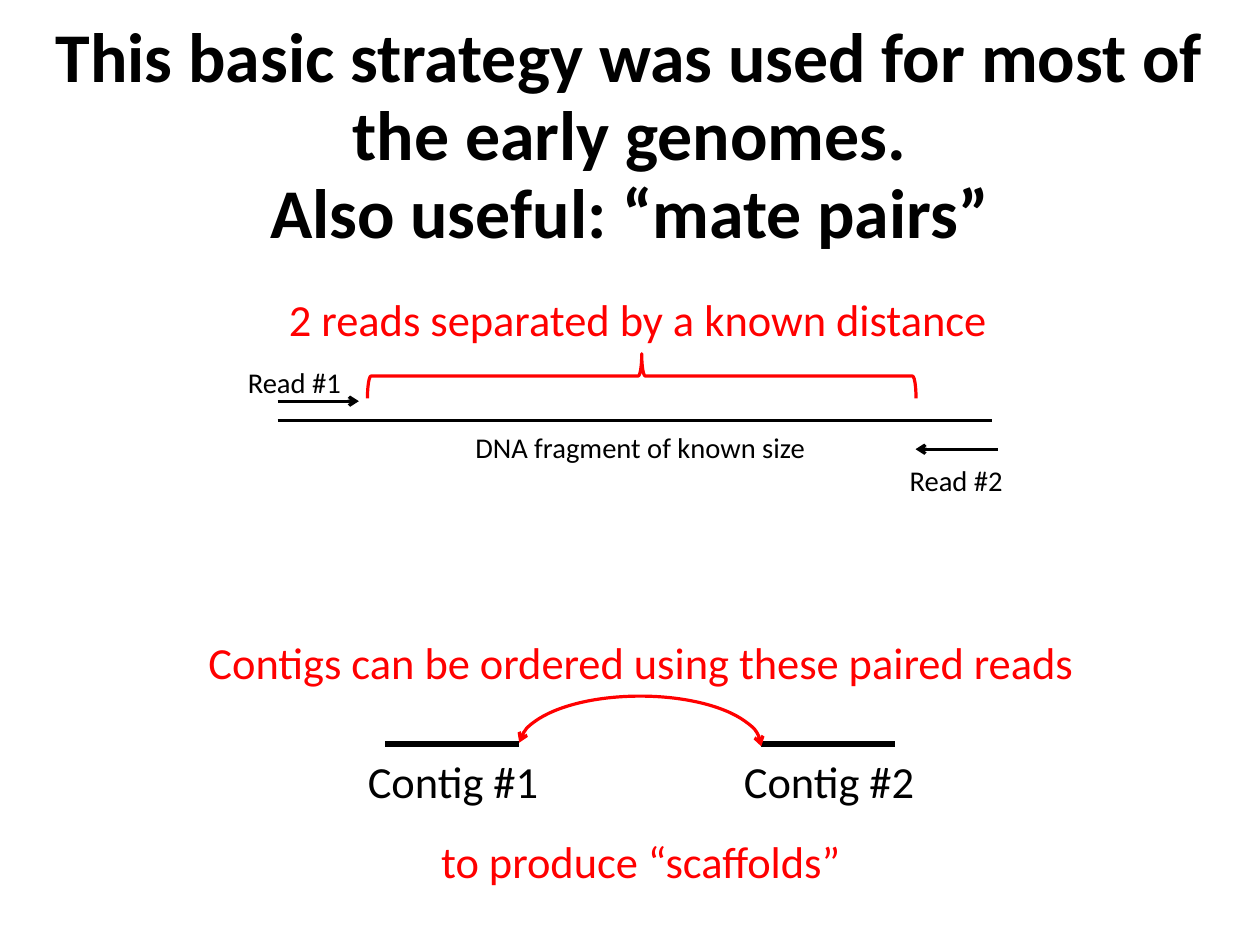
from dataclasses import dataclass

from lxml import etree
from pptx import Presentation
from pptx import util as u
from pptx.dml import color
from pptx.enum import shapes, text
from pptx.oxml import ns

BLACK, RED = "000000", "FF0000"
FONT = "Calibri"
CM_PER_INCH = 2.54
PAGE_WIDTH, PAGE_HEIGHT = 28 / CM_PER_INCH, 21 / CM_PER_INCH


@dataclass
class Label:
    lines: list[str]
    left: float
    top: float
    width: float
    height: float
    size: int
    ink: str = BLACK
    bold: bool = False
    centred: bool = False
    wrap: bool = False
    gap: float = 0  # points between paragraphs


@dataclass
class Stroke:
    start: float
    end: float
    y: float
    weight: float = 2
    arrow: bool = False


def rgb(value: str) -> color.RGBColor:
    return color.RGBColor.from_string(value)


def style_line(shape, ink: str, weight: float, ends: tuple[str, ...] = ()) -> None:
    shape.line.color.rgb = rgb(ink)
    shape.line.width = u.Pt(weight)
    for end in ends:
        etree.SubElement(shape.line._get_or_add_ln(), ns.qn(f"a:{end}"), type="arrow")


def add_label(page, label: Label) -> None:
    box = page.shapes.add_textbox(u.Inches(label.left), u.Inches(label.top),
                                  u.Inches(label.width), u.Inches(label.height))
    frame = box.text_frame
    frame.text = "\n".join(label.lines)
    frame.word_wrap = label.wrap
    frame.auto_size = text.MSO_AUTO_SIZE.SHAPE_TO_FIT_TEXT
    for index, para in enumerate(frame.paragraphs):
        para.line_spacing = 0.93
        para.alignment = text.PP_ALIGN.CENTER if label.centred else text.PP_ALIGN.LEFT
        if index and label.gap:
            para.space_before = u.Pt(label.gap)
        for span in para.runs:
            span.font.name = FONT
            span.font.size = u.Pt(label.size)
            span.font.bold = label.bold
            span.font.color.rgb = rgb(label.ink)


def add_stroke(page, stroke: Stroke) -> None:
    line = page.shapes.add_connector(
        shapes.MSO_CONNECTOR.STRAIGHT, u.Inches(stroke.start), u.Inches(stroke.y),
        u.Inches(stroke.end), u.Inches(stroke.y))
    style_line(line, BLACK, stroke.weight, ("tailEnd",) if stroke.arrow else ())
    etree.SubElement(line._element.spPr, ns.qn("a:effectLst"))


def add_outline(page, kind, left: float, top: float, width: float, height: float,
                adjustments: tuple[float, float], rotation: float = 0,
                ends: tuple[str, ...] = ()) -> None:
    shape = page.shapes.add_shape(kind, u.Inches(left), u.Inches(top),
                                  u.Inches(width), u.Inches(height))
    shape.rotation = rotation
    for index, value in enumerate(adjustments):
        shape.adjustments[index] = value
    shape.fill.background()
    style_line(shape, RED, 2, ends)
    shape.shadow.inherit = False


CONTIG_LEFTS = (3.37, 6.66)
CONTIG_WIDTH, CONTIG_Y = 1.17, 6.51

STROKES = [
    Stroke(2.43, 8.68, 3.68),  # DNA fragment
    Stroke(2.43, 3.14, 3.51, arrow=True),  # read 1
    Stroke(8.73, 8.01, 3.93, arrow=True),  # read 2
    *(Stroke(left, left + CONTIG_WIDTH, CONTIG_Y, weight=4) for left in CONTIG_LEFTS),
]

LABELS = [
    Label(["This basic strategy was used for most of the early genomes.",
           "Also useful: “mate pairs”"],
          0, 0.13, PAGE_WIDTH, 2.17, 44, bold=True, centred=True, wrap=True),
    Label(["2 reads separated by a known distance"], 2.43, 2.55, 6.37, 0.54, 28, RED),
    *(Label([f"Contig #{number}"], left - 0.25, 6.59, 1.71, 0.54, 28)
      for number, left in enumerate(CONTIG_LEFTS, 1)),
    Label(["Contigs can be ordered using these paired reads", "to produce “scaffolds”"],
          1.68, 5.55, 7.85, 2.29, 28, RED, centred=True, gap=94),
    Label(["Read #1"], 2.07, 3.17, 1.03, 0.38, 18),
    Label(["Read #2"], 7.86, 4.03, 1.03, 0.38, 18),
    Label(["DNA fragment of known size"], 4.06, 3.74, 3.12, 0.38, 18),
]


def main() -> None:
    deck = Presentation()
    deck.slide_width, deck.slide_height = u.Inches(PAGE_WIDTH), u.Inches(PAGE_HEIGHT)
    page = deck.slides.add_slide(deck.slide_layouts[6])

    # Fragment, reads and contigs
    for stroke in STROKES:
        add_stroke(page, stroke)

    # Brace over the known distance
    add_outline(page, shapes.MSO_SHAPE.RIGHT_BRACE, 5.42, 0.89, 0.39, 4.8,
                (0.08, 0.5), rotation=270)

    # Arc joining the two contigs
    arc_left = CONTIG_LEFTS[0] + CONTIG_WIDTH
    add_outline(page, shapes.MSO_SHAPE.ARC, arc_left, 6.09, CONTIG_LEFTS[1] - arc_left, 0.88,
                (109.05, 0), ends=("headEnd", "tailEnd"))

    # Title and captions
    for label in LABELS:
        add_label(page, label)

    deck.save("out.pptx")


if __name__ == "__main__":
    main()
